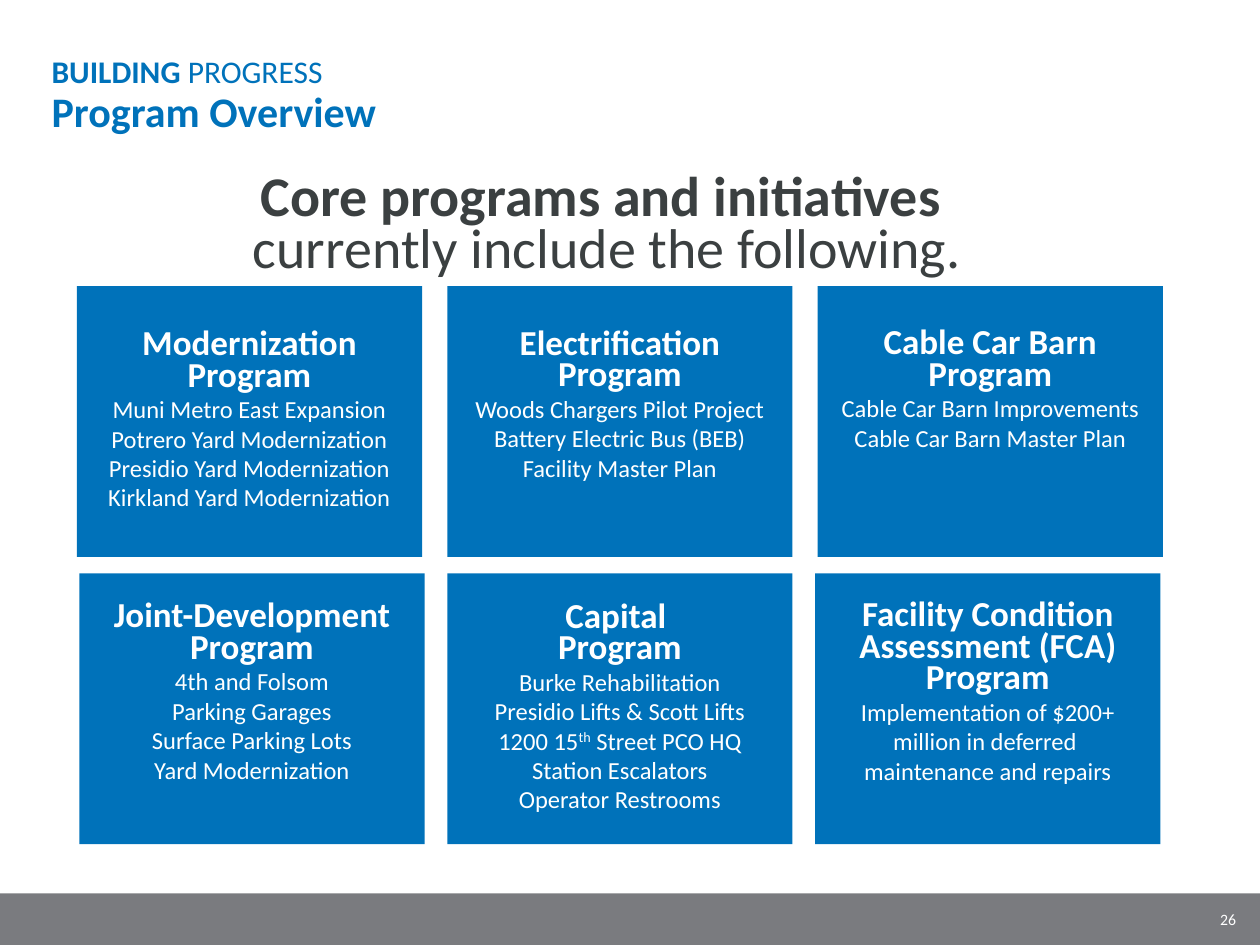
from dataclasses import dataclass

from pptx import Presentation
from pptx.dml.color import RGBColor
from pptx.enum.shapes import MSO_SHAPE
from pptx.enum.text import MSO_ANCHOR, MSO_AUTO_SIZE, PP_ALIGN
from pptx.util import Inches, Pt

BLUE, GREY, DARK, WHITE = "0072BA", "7A7B7F", "3B4041", "FFFFFF"
WIDE, HIGH = 10, 7.5
CARD = (2.74, 2.15)
TOP, ROW = 2.27, 2.28
COLS = [(0.61, 2.94), (0.63, 2.92)]  # left edge and pitch of each row
LINE = 0.24  # height of one list line


@dataclass
class Run:
    text: str
    size: float
    color: str
    bold: bool = False
    raised: bool = False


@dataclass
class Para:
    runs: list[Run]
    space: object = None  # line spacing
    align: object = PP_ALIGN.CENTER


@dataclass
class Card:
    head: list[str]
    items: list  # a tuple item holds text, superscript, text
    lift: int = 0  # lines left free below the list


CARDS = [
    [
        Card(["Modernization Program"],
             ["Muni Metro East Expansion", "Potrero Yard Modernization",
              "Presidio Yard Modernization", "Kirkland Yard Modernization"]),
        Card(["Electrification Program"],
             ["Woods Chargers Pilot Project",
              "Battery Electric Bus (BEB) Facility Master Plan"], 1),
        Card(["Cable Car Barn Program"],
             ["Cable Car Barn Improvements", "Cable Car Barn Master Plan"], 2),
    ],
    [
        Card(["Joint-Development", "Program"],
             ["4th and Folsom", "Parking Garages", "Surface Parking Lots",
              "Yard Modernization"], 1),
        Card(["Capital ", "Program"],
             ["Burke Rehabilitation", "Presidio Lifts & Scott Lifts",
              ("1200 15", "th", " Street PCO HQ"),
              "Station Escalators", "Operator Restrooms"]),
        Card(["Facility Condition Assessment (FCA) Program"],
             ["Implementation of $200+ million in deferred ",
              "maintenance and repairs"], 1),
    ],
]


def paint(form, color: str) -> None:
    """Give a fill or a font colour from a hex string."""
    form.rgb = RGBColor.from_string(color)


def write(frame, paras: list[Para], **form) -> None:
    base = dict(word_wrap=True, auto_size=MSO_AUTO_SIZE.NONE,
                vertical_anchor=MSO_ANCHOR.TOP)
    for key, val in (base | form).items():
        setattr(frame, key, val)
    for num, para in enumerate(paras):
        line = frame.add_paragraph() if num else frame.paragraphs[0]
        line.alignment = para.align
        if para.space:
            line.line_spacing = para.space
        for part in para.runs:
            run = line.add_run()
            run.text = part.text
            looks = dict(name="Calibri", size=Pt(part.size), bold=part.bold)
            for key, val in looks.items():
                setattr(run.font, key, val)
            paint(run.font.color, part.color)
            if part.raised:
                run.font._element.set("baseline", "30000")


def block(slide, x: float, y: float, w: float, h: float, color: str):
    shape = slide.shapes.add_shape(
        MSO_SHAPE.RECTANGLE, *map(Inches, (x, y, w, h)))
    shape.shadow.inherit = False
    shape.fill.solid()
    paint(shape.fill.fore_color, color)
    shape.line.fill.background()
    return shape


def label(slide, x: float, y: float, w: float, h: float,
          paras: list[Para], **form) -> None:
    box = slide.shapes.add_textbox(*map(Inches, (x, y, w, h)))
    write(box.text_frame, paras, **form)


def entry(item) -> Para:
    parts = (item,) if isinstance(item, str) else item
    return Para([Run(text, 14, WHITE, raised=num == 1)
                 for num, text in enumerate(parts)])


def draw(slide, card: Card, row: int, col: int) -> None:
    left, pitch = COLS[row]
    shape = block(slide, left + col * pitch, TOP + row * ROW, *CARD, BLUE)
    heads = [Para([Run(text, 20, WHITE, True)], Pt(18)) for text in card.head]
    write(shape.text_frame, heads + [entry(item) for item in card.items],
          vertical_anchor=MSO_ANCHOR.MIDDLE,
          margin_bottom=Inches(0.05 + LINE * card.lift))


def main() -> None:
    deck = Presentation()
    deck.slide_width, deck.slide_height = Inches(WIDE), Inches(HIGH)
    slide = deck.slides.add_slide(deck.slide_layouts[5])

    title = slide.shapes.title
    spot = dict(left=0.31, top=0.4, width=9, height=1.03)
    for key, val in spot.items():
        setattr(title, key, Inches(val))
    write(title.text_frame, [
        Para([Run("BUILDING ", 18, BLUE, True), Run("PROGRESS", 18, BLUE)],
             0.9, PP_ALIGN.LEFT),
        Para([Run("Program Overview", 24, BLUE, True)], 0.9, PP_ALIGN.LEFT),
    ])

    foot = 0.41
    block(slide, 0, HIGH - foot, WIDE, foot, GREY)
    label(slide, 9.31, HIGH - foot, 0.6, foot,
          [Para([Run("26", 9, WHITE)], align=PP_ALIGN.RIGHT)],
          vertical_anchor=MSO_ANCHOR.MIDDLE)

    for row, cards in enumerate(CARDS):
        for col, card in enumerate(cards):
            draw(slide, card, row, col)

    label(slide, 0.15, 1.34, 9.34, 0.87, [
        Para([Run("Core programs and initiatives ", 32, DARK, True)], Pt(30)),
        Para([Run("currently include the following.", 32, DARK)], Pt(30)),
    ])
    deck.save("out.pptx")


if __name__ == "__main__":
    main()
